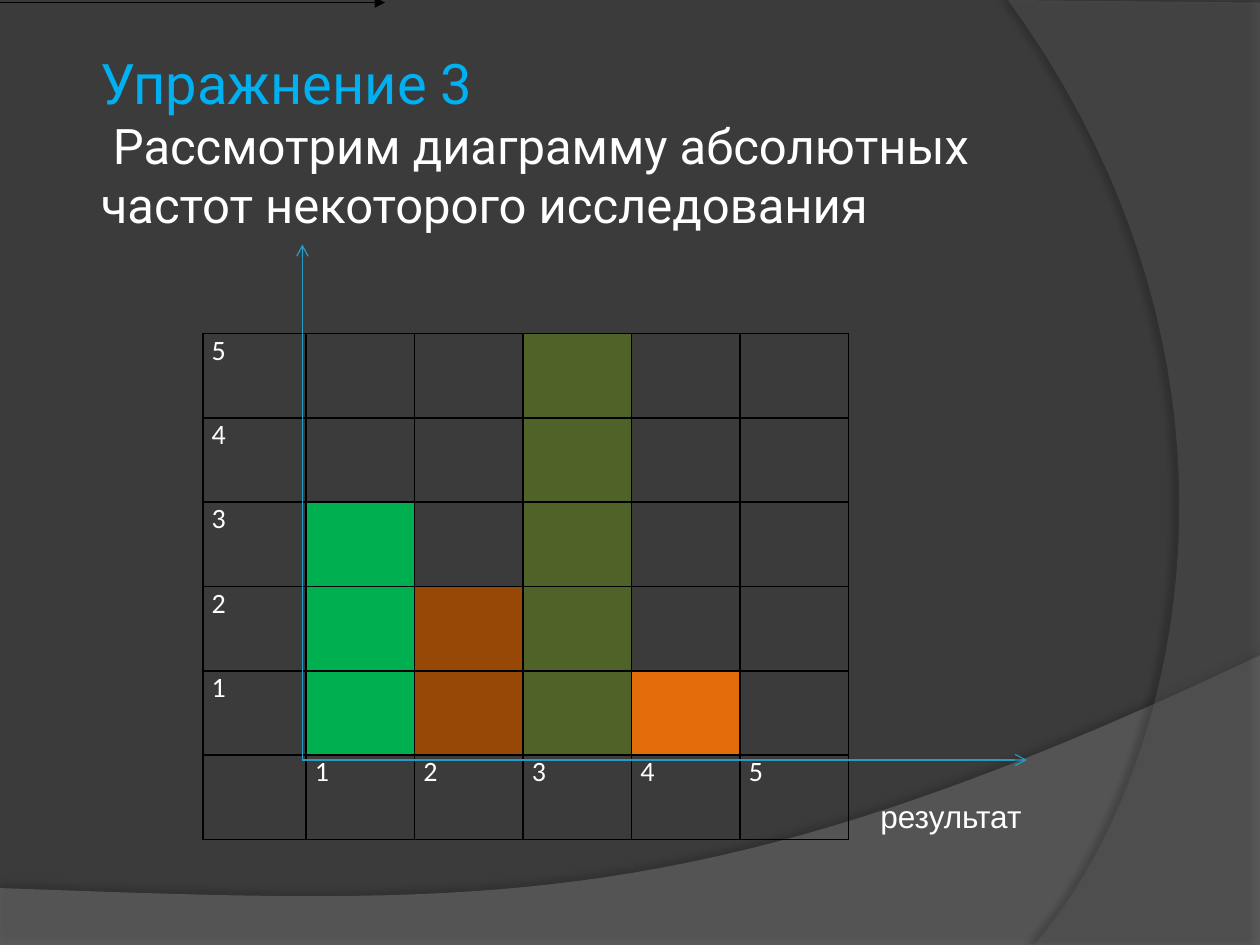
from dataclasses import dataclass

from lxml import etree
from pptx import Presentation
from pptx import util as u
from pptx.dml.color import RGBColor
from pptx.enum import shapes as es
from pptx.enum import text as et
from pptx.oxml.ns import qn

Point = tuple[float, float]
WHITE, BLACK, BLUE, AXIS = "FFFFFF", "000000", "00B0F0", "239BC2"


@dataclass
class Wave:
    """Translucent backdrop; its edge curves from the last corner."""
    corners: list[Point]
    curve: list[Point]
    fill: str
    alpha: int
    shade: int
    dist: float
    angle: int


@dataclass
class Arrow:
    start: Point
    end: Point
    color: str
    head: str


@dataclass
class Bar:
    height: int
    fill: str


WAVES = [
    Wave([(0, 507.5), (0, 540), (720, 540), (720, 374.5)],
         [(402.5, 525), (281.5, 517.5), (0, 507.5)], "7F7F7F", 45, 35, 3.5, 270),
    Wave([(720, 1.5), (720, 540), (591, 540)],
         [(673, 446), (733, 216), (576, 0)], "5E5E5E", 40, 45, 4, 180),
]
ORIGIN = (172.8, 434.3)
ARROWS = [
    Arrow((-6, 1.5), (220, 1.5), BLACK, "triangle"),
    Arrow(ORIGIN, (586.8, ORIGIN[1]), AXIS, "arrow"),
    Arrow(ORIGIN, (ORIGIN[0], 139.7), AXIS, "arrow"),
]
BARS = [Bar(3, "00B050"), Bar(2, "984806"), Bar(5, "4F6228"),
        Bar(1, "E36C0A"), Bar(0, BLACK)]
LEVELS = 5


def rgb(code: str) -> RGBColor:
    return RGBColor.from_string(code)


def style(run, size: float, face: str, color: str) -> None:
    run.font.size = u.Pt(size)
    run.font.name = face
    run.font.color.rgb = rgb(color)


def sub(parent, tag: str, **attrs):
    return etree.SubElement(parent, qn(tag), {k: str(v) for k, v in attrs.items()})


def bend(start: Point, curve: list[Point], steps: int = 40) -> list[Point]:
    """Points along a cubic Bezier curve."""
    pts = [start, *curve]
    out = []
    for i in range(1, steps + 1):
        t = i / steps
        w = ((1 - t) ** 3, 3 * t * (1 - t) ** 2, 3 * t * t * (1 - t), t ** 3)
        out.append(tuple(sum(k * p[a] for k, p in zip(w, pts)) for a in (0, 1)))
    return out


def draw_wave(slide, wave: Wave) -> None:
    pts = [(u.Pt(x), u.Pt(y))
           for x, y in wave.corners + bend(wave.corners[-1], wave.curve)]
    build = slide.shapes.build_freeform(*pts[0])
    build.add_line_segments(pts[1:], close=True)
    shape = build.convert_to_shape()
    shape.fill.solid()
    shape.fill.fore_color.rgb = rgb(wave.fill)
    shape.line.fill.background()
    shape.shadow.inherit = False
    props = shape.element.spPr
    sub(props.find(".//" + qn("a:srgbClr")), "a:alpha", val=wave.alpha * 1000)
    glow = sub(props.find(qn("a:effectLst")), "a:outerShdw", blurRad=u.Pt(4),
               dist=u.Pt(wave.dist), dir=wave.angle * 60000, rotWithShape=0)
    tint = sub(glow, "a:srgbClr", val=BLACK)
    sub(tint, "a:alpha", val=wave.shade * 1000)


def draw_arrow(slide, arrow: Arrow) -> None:
    ends = [u.Pt(v) for v in (*arrow.start, *arrow.end)]
    line = slide.shapes.add_connector(es.MSO_CONNECTOR.STRAIGHT, *ends)
    line.line.color.rgb = rgb(arrow.color)
    line.line.width = u.Pt(0.75)
    props = line.element.spPr
    sub(props.find(qn("a:ln")), "a:tailEnd", type=arrow.head)
    sub(props, "a:effectLst")


def draw_title(slide) -> None:
    title = slide.shapes.title
    title.left, title.top = u.Pt(54), u.Pt(21)
    title.width, title.height = u.Pt(588), u.Pt(119)
    frame = title.text_frame
    frame.margin_left = frame.margin_right = u.Pt(3.6)
    frame.auto_size = et.MSO_AUTO_SIZE.NONE
    frame.vertical_anchor = et.MSO_ANCHOR.MIDDLE
    para = frame.paragraphs[0]
    para.text = ("Упражнение 3\n"
                 " Рассмотрим диаграмму абсолютных частот некоторого исследования")
    para.alignment = et.PP_ALIGN.LEFT
    for run, size, color in zip(para.runs, (32, 28), (BLUE, WHITE)):
        style(run, size, "Roboto", color)
    sub(frame._txBody.find(".//" + qn("a:br")), "a:rPr", sz=3200)
    # Bring the title in front of the backdrop
    title.element.getparent().append(title.element)


def draw_cell(cell, label: str, fill: str | None) -> None:
    cell.margin_left = cell.margin_right = u.Pt(5)
    cell.margin_top = cell.margin_bottom = 0
    if label:
        cell.text_frame.text = label
        style(cell.text_frame.paragraphs[0].runs[0], 16, "Calibri", WHITE)
    props = cell._tc.get_or_add_tcPr()
    for side in ("a:lnL", "a:lnR", "a:lnT", "a:lnB"):
        edge = sub(props, side, w=u.Pt(1))
        sub(sub(edge, "a:solidFill"), "a:srgbClr", val=BLACK)
    if fill:
        cell.fill.solid()
        cell.fill.fore_color.rgb = rgb(fill)
    else:
        cell.fill.background()


def draw_grid(slide) -> None:
    first, wide, high = 59, 62, 48.2
    rows, cols = LEVELS + 1, len(BARS) + 1
    table = slide.shapes.add_table(
        rows, cols, u.Pt(116), u.Pt(190.6),
        u.Pt(first + wide * len(BARS)), u.Pt(high * rows)).table
    table.first_row = table.horz_banding = False
    for c in range(cols):
        table.columns[c].width = u.Pt(wide if c else first)
    for r in range(rows):
        table.rows[r].height = u.Pt(high)
        level = LEVELS - r
        for c in range(cols):
            # Levels run down the first column, results along the last row
            label = str(c or level) if (c == 0) != (level == 0) else ""
            full = c and 0 < level <= BARS[c - 1].height
            draw_cell(table.cell(r, c), label, BARS[c - 1].fill if full else None)


def draw_label(slide) -> None:
    box = slide.shapes.add_textbox(u.Pt(496), u.Pt(451.5), u.Pt(108), u.Pt(29))
    frame = box.text_frame
    frame.word_wrap = True
    frame.vertical_anchor = et.MSO_ANCHOR.MIDDLE
    frame.text = "результат"
    style(frame.paragraphs[0].runs[0], 18, "Arial", WHITE)


def main() -> None:
    deck = Presentation()
    deck.slide_width, deck.slide_height = u.Pt(720), u.Pt(540)
    slide = deck.slides.add_slide(deck.slide_layouts[5])
    # Backdrop
    slide.background.fill.solid()
    slide.background.fill.fore_color.rgb = rgb("3B3B3B")
    for wave in WAVES:
        draw_wave(slide, wave)
    # Title and frequency diagram
    draw_title(slide)
    draw_grid(slide)
    for arrow in ARROWS:
        draw_arrow(slide, arrow)
    draw_label(slide)
    deck.save("out.pptx")


if __name__ == "__main__":
    main()
